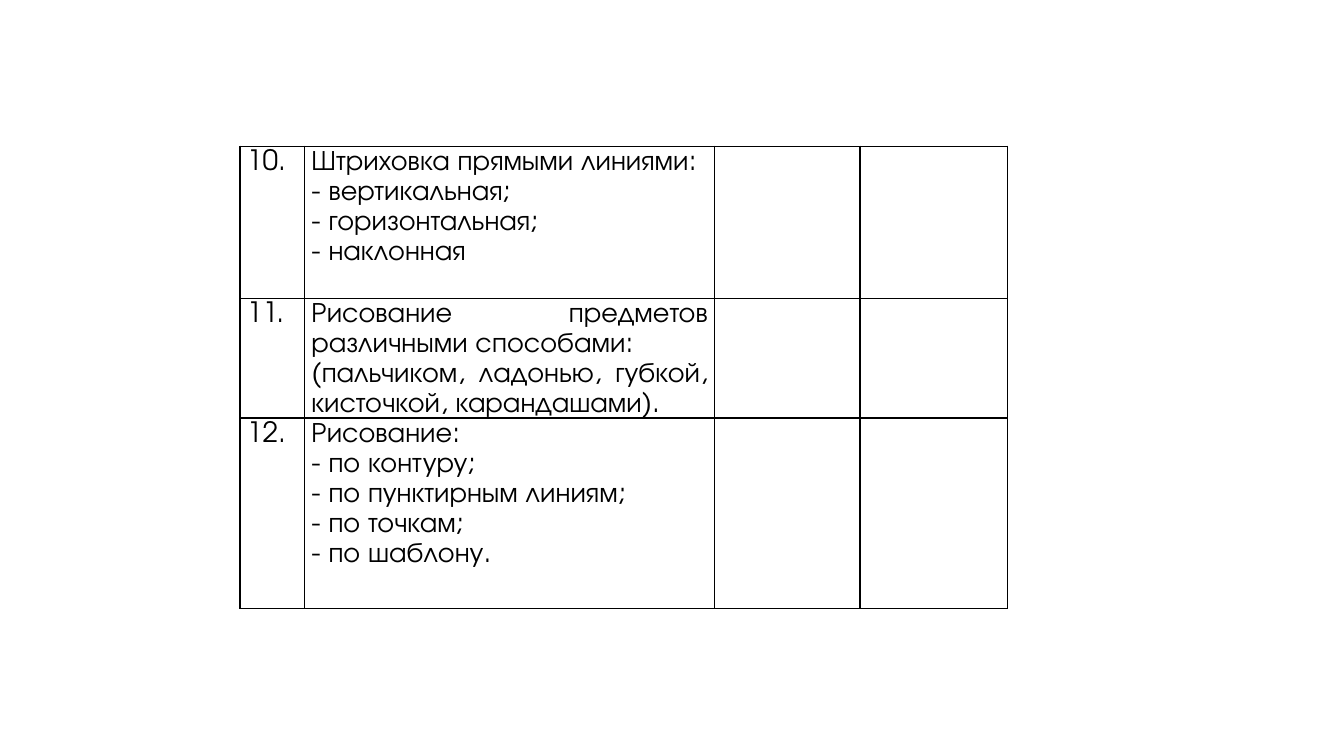
from pptx import Presentation
from pptx import util as u
from pptx.dml.color import RGBColor
from pptx.enum import text
from pptx.oxml import parse_xml
from pptx.oxml.ns import nsdecls

FONT = "TeX Gyre Adventor"
INK = "000000"
WIDTHS = [0.64, 4.07, 1.44, 1.46]
HEIGHTS = [1.51, 1.13, 1.89]
SKILLS = [
    ("10.", ["Штриховка прямыми линиями:", "- вертикальная;",
             "- горизонтальная;", "- наклонная"]),
    ("11.", ["Рисование предметов различными способами:",
             "(пальчиком, ладонью, губкой, кисточкой, карандашами)."]),
    ("12.", ["Рисование:", "- по контуру;", "- по пунктирным линиям;",
             "- по точкам;", "- по шаблону."]),
]


def color(code):
    return RGBColor.from_string(code)


def assign(item, values):
    for name, value in values.items():
        setattr(item, name, value)


def border(cell):
    props = cell._tc.get_or_add_tcPr()
    for pos, side in enumerate(("lnL", "lnR", "lnT", "lnB")):
        props.insert(pos, parse_xml(
            f'<a:{side} {nsdecls("a")} w="{u.Pt(1)}"><a:solidFill>'
            f'<a:srgbClr val="{INK}"/></a:solidFill></a:{side}>'))


def write(cell, lines):
    frame = cell.text_frame
    for pos, line in enumerate(lines):
        para = frame.add_paragraph() if pos else frame.paragraphs[0]
        para.text = line
        assign(para, {"alignment": text.PP_ALIGN.JUSTIFY,
                      "line_spacing": 1.15})
        assign(para.font, {"name": FONT, "size": u.Pt(20)})
        para.font.color.rgb = color(INK)


def skill_table(slide, left, top):
    grid = slide.shapes.add_table(
        len(HEIGHTS), len(WIDTHS), u.Inches(left), u.Inches(top),
        u.Inches(sum(WIDTHS)), u.Inches(sum(HEIGHTS))).table
    assign(grid, {"first_row": False, "horz_banding": False})

    # Column and row sizes
    for col, width in zip(grid.columns, WIDTHS):
        col.width = u.Inches(width)
    for row, height in zip(grid.rows, HEIGHTS):
        row.height = u.Inches(height)

    # Plain ruled cells
    pad = u.Inches(0.07)
    for cell in grid.iter_cells():
        assign(cell, {"margin_left": pad, "margin_right": pad,
                      "margin_top": 0, "margin_bottom": 0})
        cell.fill.background()
        border(cell)

    # Number and skill text
    for row, (number, lines) in enumerate(SKILLS):
        write(grid.cell(row, 0), [number])
        write(grid.cell(row, 1), lines)


def main():
    deck = Presentation()
    assign(deck, {"slide_width": u.Inches(13.33),
                  "slide_height": u.Inches(7.5)})
    slide = deck.slides.add_slide(deck.slide_layouts[6])
    skill_table(slide, 2.38, 1.45)
    deck.save("out.pptx")


if __name__ == "__main__":
    main()
